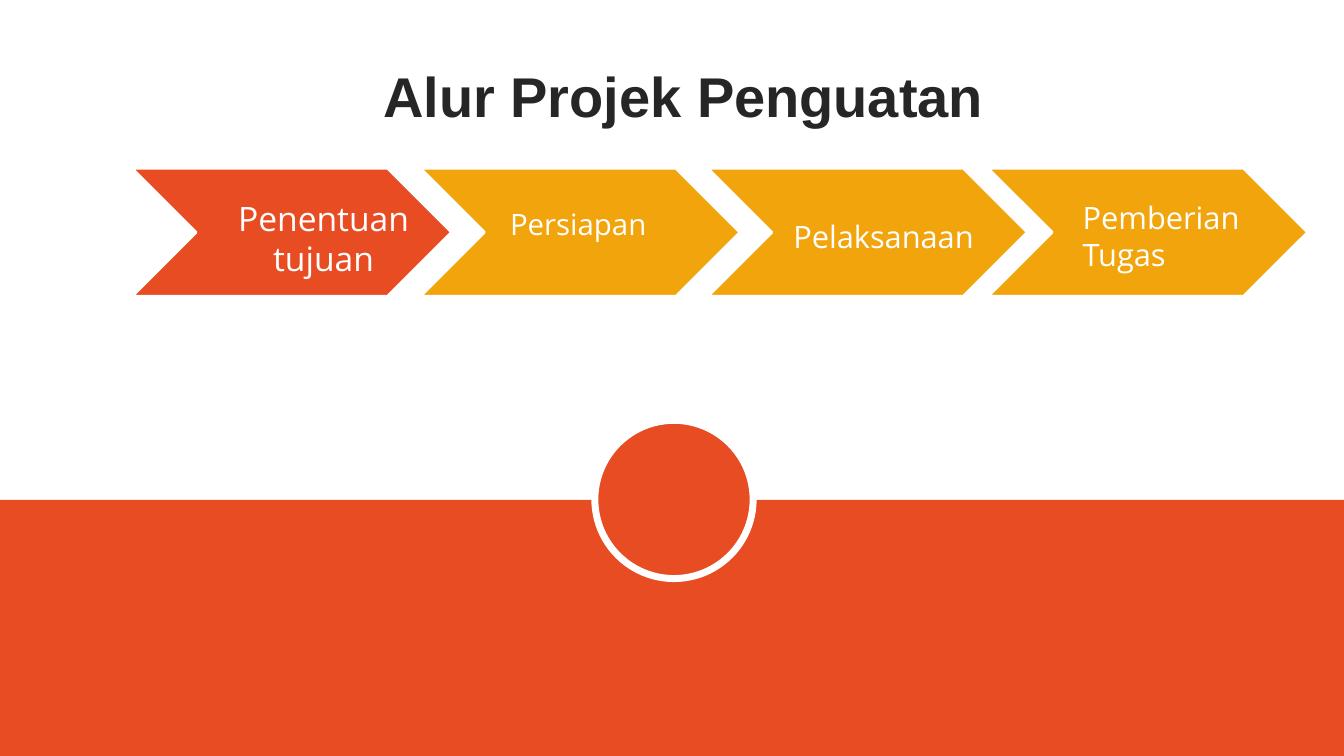
"""Build the project-flow slide with four chevron steps above a coloured band."""
from dataclasses import dataclass

from pptx import Presentation
from pptx.dml.color import RGBColor
from pptx.enum.shapes import MSO_SHAPE as Preset
from pptx.enum.text import MSO_ANCHOR as Anchor, MSO_AUTO_SIZE as AutoSize, PP_ALIGN as Align
from pptx.util import Inches, Pt


@dataclass(frozen=True)
class Theme:
    """Colours, fonts and type sizes of the slide."""
    active: str = "E84C22"
    step: str = "F2A40D"
    light: str = "FFFFFF"
    dark: str = "262626"
    title_font: str = "Arial"
    body_font: str = "Open Sans"
    title_size: int = 40
    active_size: int = 24
    step_size: int = 22
    small_size: int = 21


class SlideBuilder:
    """Draw styled elements on one slide."""

    def __init__(self, presentation, theme):
        """Add a title-only slide and keep its theme."""
        self.theme = theme
        self.slide = presentation.slides.add_slide(presentation.slide_layouts[5])

    def shape(self, preset, box, color, line_width=0):
        """Add a filled preset shape with an optional light outline."""
        shape = self.slide.shapes.add_shape(preset, *map(Inches, box))
        shape.shadow.inherit = False
        shape.fill.solid()
        shape.fill.fore_color.rgb = RGBColor.from_string(color)
        if line_width:
            shape.line.color.rgb = RGBColor.from_string(self.theme.light)
            shape.line.width = Pt(line_width)
        else:
            shape.line.fill.background()
        return shape

    def set_text(self, shape, lines, font, size, color, align=Align.LEFT, bold=False):
        """Put one paragraph per line into a shape."""
        frame = shape.text_frame
        frame.word_wrap = True
        frame.auto_size = AutoSize.NONE
        frame.vertical_anchor = Anchor.TOP
        for index, line in enumerate(lines):
            paragraph = frame.add_paragraph() if index else frame.paragraphs[0]
            paragraph.alignment = align
            run = paragraph.add_run()
            run.text = line
            run.font.name = font
            run.font.size = Pt(size)
            run.font.bold = bold
            run.font.color.rgb = RGBColor.from_string(color)

    def title(self, text, box):
        """Place and format the title placeholder."""
        title = self.slide.shapes.title
        title.left, title.top, title.width, title.height = map(Inches, box)
        self.set_text(title, [text], self.theme.title_font, self.theme.title_size,
                      self.theme.dark, bold=True)

    def label(self, lines, box, size, align):
        """Add a light text box for a step."""
        text_box = self.slide.shapes.add_textbox(*map(Inches, box))
        self.set_text(text_box, lines, self.theme.body_font, size, self.theme.light, align)

    def step(self, left, color, lines, box, size, align=Align.LEFT):
        """Add a chevron and its label."""
        chevron = self.shape(Preset.CHEVRON, (left, 1.67, 3.17, 1.27), color, 2)
        chevron.adjustments[0] = 0.5
        self.label(lines, box, size, align)


def main():
    """Compose the slide and save it."""
    theme = Theme()
    presentation = Presentation()
    presentation.slide_width = Inches(13.33)
    presentation.slide_height = Inches(7.5)
    builder = SlideBuilder(presentation, theme)

    builder.shape(Preset.RECTANGLE, (0, 4.96, 13.33, 2.54), theme.active)
    builder.shape(Preset.OVAL, (5.9, 4.17, 1.57, 1.57), theme.active, 5)
    builder.title("Alur Projek Penguatan", (3.7, 0.56, 6.34, 0.77))

    steps = [
        (1.31, theme.active, ["Penentuan", "tujuan"], (1.78, 1.91, 2.86, 1.14),
         theme.active_size, Align.CENTER),
        (4.17, theme.step, ["Persiapan"], (4.96, 2, 2.05, 0.45), theme.small_size),
        (7.02, theme.step, ["Pelaksanaan"], (7.77, 2.11, 2.34, 0.5), theme.step_size),
        (9.8, theme.step, ["Pemberian", "Tugas"], (10.64, 1.92, 2.34, 0.9), theme.step_size),
    ]
    for step in steps:
        builder.step(*step)
    presentation.save("out.pptx")


if __name__ == "__main__":
    main()
